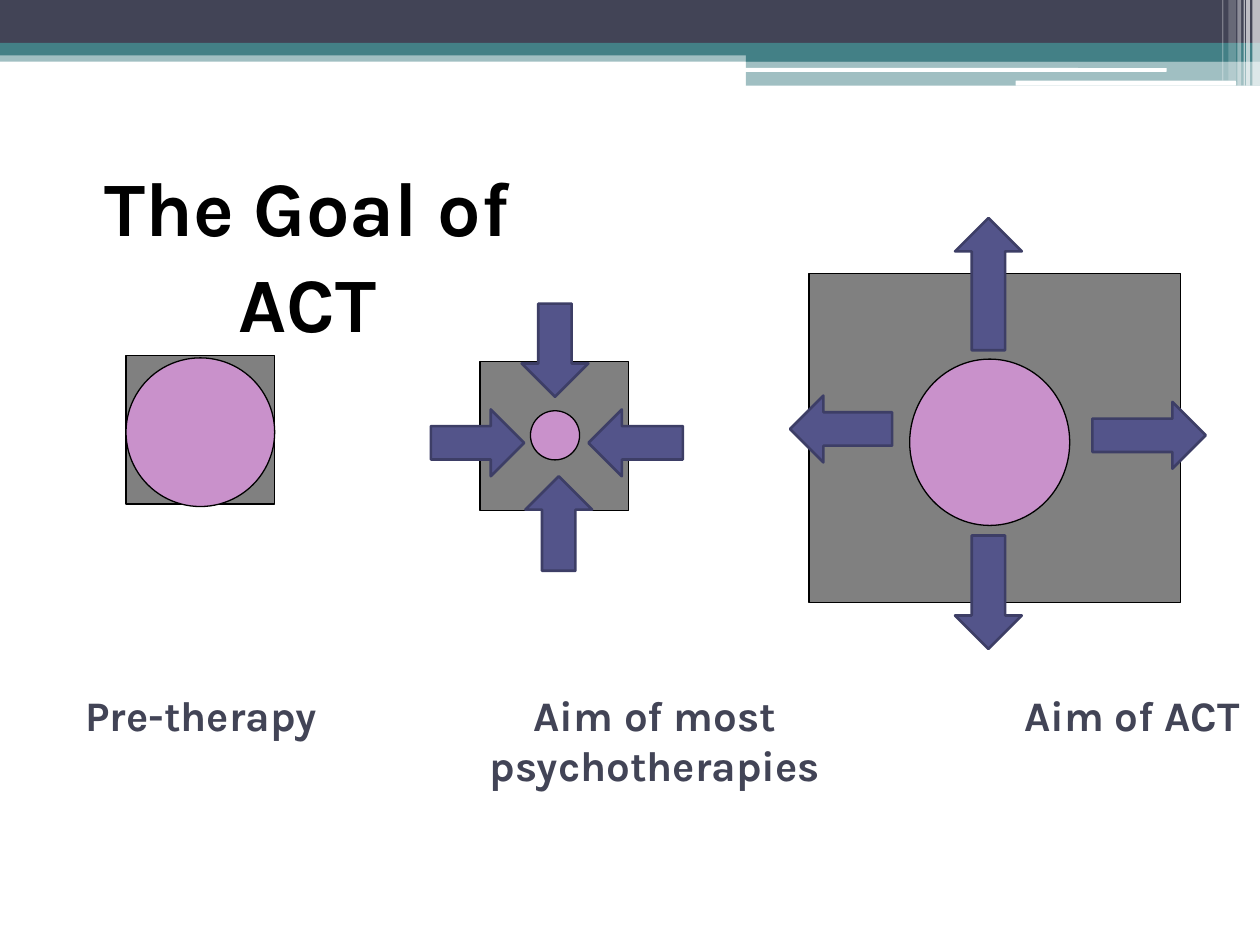
from lxml import etree
from pptx import Presentation
from pptx.dml.color import RGBColor
from pptx.enum.shapes import MSO_SHAPE
from pptx.enum.text import MSO_ANCHOR, PP_ALIGN
from pptx.oxml.ns import qn
from pptx.util import Inches, Pt

RECT, ROUND, OVAL = MSO_SHAPE.RECTANGLE, MSO_SHAPE.ROUNDED_RECTANGLE, MSO_SHAPE.OVAL
UP, DOWN = MSO_SHAPE.UP_ARROW, MSO_SHAPE.DOWN_ARROW
LEFT, RIGHT = MSO_SHAPE.LEFT_ARROW, MSO_SHAPE.RIGHT_ARROW
CENTER, TOP = PP_ALIGN.CENTER, MSO_ANCHOR.TOP

NAVY, TEAL, WHITE, BLACK = "424456", "438086", "FFFFFF", "000000"
GRAY, PINK, INDIGO, INDIGO_DARK = "808080", "C991CB", "53548A", "3D3E66"


def color(value):
    return RGBColor.from_string(value)


class SlideBuilder:
    font = "Karla"

    def __init__(self, slide):
        self.slide = slide

    def shape(self, kind, box, fill, line=None, width=0.75, alpha=100):
        sp = self.slide.shapes.add_shape(kind, *map(Inches, box))
        sp.shadow.inherit = False
        sp.fill.solid()
        sp.fill.fore_color.rgb = color(fill)
        if alpha < 100:
            clr = sp.fill._xPr.find(".//" + qn("a:srgbClr"))
            etree.SubElement(clr, qn("a:alpha"), val=str(alpha * 1000))
        if line:
            sp.line.color.rgb = color(line)
            sp.line.width = Pt(width)
        else:
            sp.line.fill.background()
        return sp

    def outlined(self, kind, box, fill):
        return self.shape(kind, box, fill, BLACK)

    def arrow(self, kind, box):
        return self.shape(kind, box, INDIGO, INDIGO_DARK, 1.5)

    def text(self, box, lines, size, ink, align=None, spacing=None, tabs=()):
        tf = self.slide.shapes.add_textbox(*map(Inches, box)).text_frame
        tf.word_wrap = True
        tf.vertical_anchor = TOP
        tf.text = "\n".join(lines)
        for p in tf.paragraphs:
            p.alignment = align
            p.line_spacing = spacing
            if tabs:
                tab_list = etree.SubElement(p._p.get_or_add_pPr(), qn("a:tabLst"))
                for pos, algn in tabs:
                    etree.SubElement(tab_list, qn("a:tab"),
                                     pos=str(Inches(pos)), algn=algn)
            for r in p.runs:
                r.font.name = self.font
                r.font.size = Pt(size)
                r.font.bold = True
                r.font.color.rgb = color(ink)


def main():
    prs = Presentation()
    prs.slide_width, prs.slide_height = Inches(10), Inches(7.5)
    s = SlideBuilder(prs.slides.add_slide(prs.slide_layouts[6]))

    # Header bands
    for box, fill, alpha in [
        ((0, 0.4, 10, 0.09), TEAL, 50),
        ((0, 0, 10, 0.34), NAVY, 100),
        ((0, 0.34, 10, 0.1), TEAL, 100),
        ((5.92, 0.39, 4.08, 0.1), TEAL, 100),
        ((5.92, 0.48, 4.08, 0.2), TEAL, 50),
    ]:
        s.shape(RECT, box, fill, alpha=alpha)
    for box in [(5.91, 0.54, 3.35, 0.03), (8.06, 0.64, 1.75, 0.04)]:
        s.shape(ROUND, box, WHITE)

    # Translucent stripes in the header corner
    for x, w, h, alpha in [
        (9.94, 0.06, 0.68, 65), (9.89, 0.03, 0.68, 65), (9.87, 0.01, 0.68, 60),
        (9.82, 0.03, 0.68, 40), (9.75, 0.06, 0.64, 20), (9.7, 0.01, 0.64, 30),
    ]:
        s.shape(RECT, (x, 0, w, h), WHITE, alpha=alpha)

    # Life space (square) and problem (circle) at each stage
    for square, circle in [
        ((1, 2.82, 1.18, 1.18), (1, 2.84, 1.18, 1.18)),
        ((3.81, 2.87, 1.18, 1.18), (4.21, 3.26, 0.39, 0.39)),
        ((6.42, 2.17, 2.95, 2.61), (7.22, 2.85, 1.27, 1.32)),
    ]:
        s.outlined(RECT, square, GRAY)
        s.outlined(OVAL, circle, PINK)

    # Captions and title
    s.text((0.58, 5.42, 9.66, 0.93),
           ["Pre-therapy\tAim of most\tAim of ACT", "\tpsychotherapies"],
           24, NAVY, tabs=[(4.52, "ctr"), (7.45, "l")])
    s.text((0.16, 1.19, 4.56, 0.86), ["The Goal of ACT"], 44, BLACK, CENTER, 1.04)

    # Arrows pressing inward, then pushing outward
    for kind, box in [
        (DOWN, (4.14, 2.41, 0.53, 0.74)),
        (RIGHT, (3.42, 3.25, 0.74, 0.53)),
        (LEFT, (4.67, 3.25, 0.75, 0.53)),
        (UP, (4.17, 3.78, 0.53, 0.75)),
        (UP, (7.58, 1.73, 0.53, 1.05)),
        (DOWN, (7.58, 4.25, 0.53, 0.9)),
        (RIGHT, (8.67, 3.19, 0.9, 0.53)),
        (LEFT, (6.27, 3.14, 0.81, 0.53)),
    ]:
        s.arrow(kind, box)

    prs.save("out.pptx")


if __name__ == "__main__":
    main()
